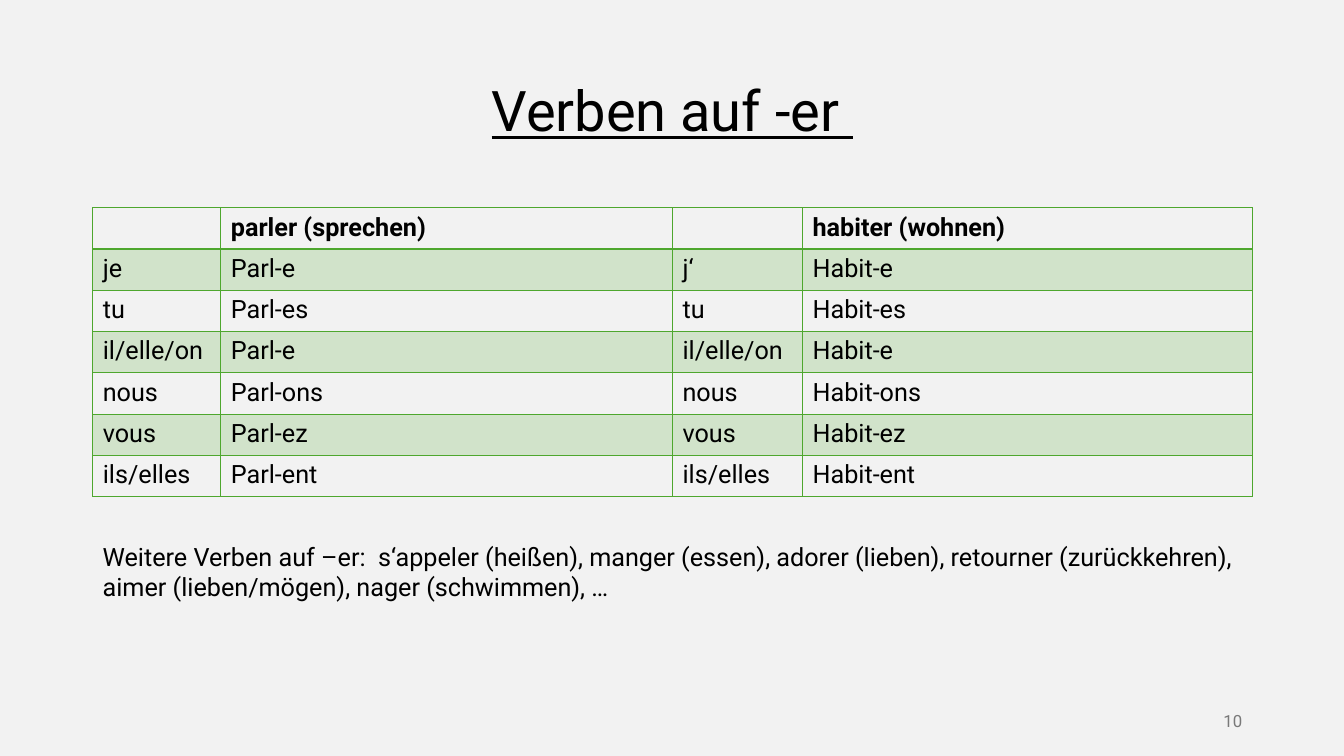
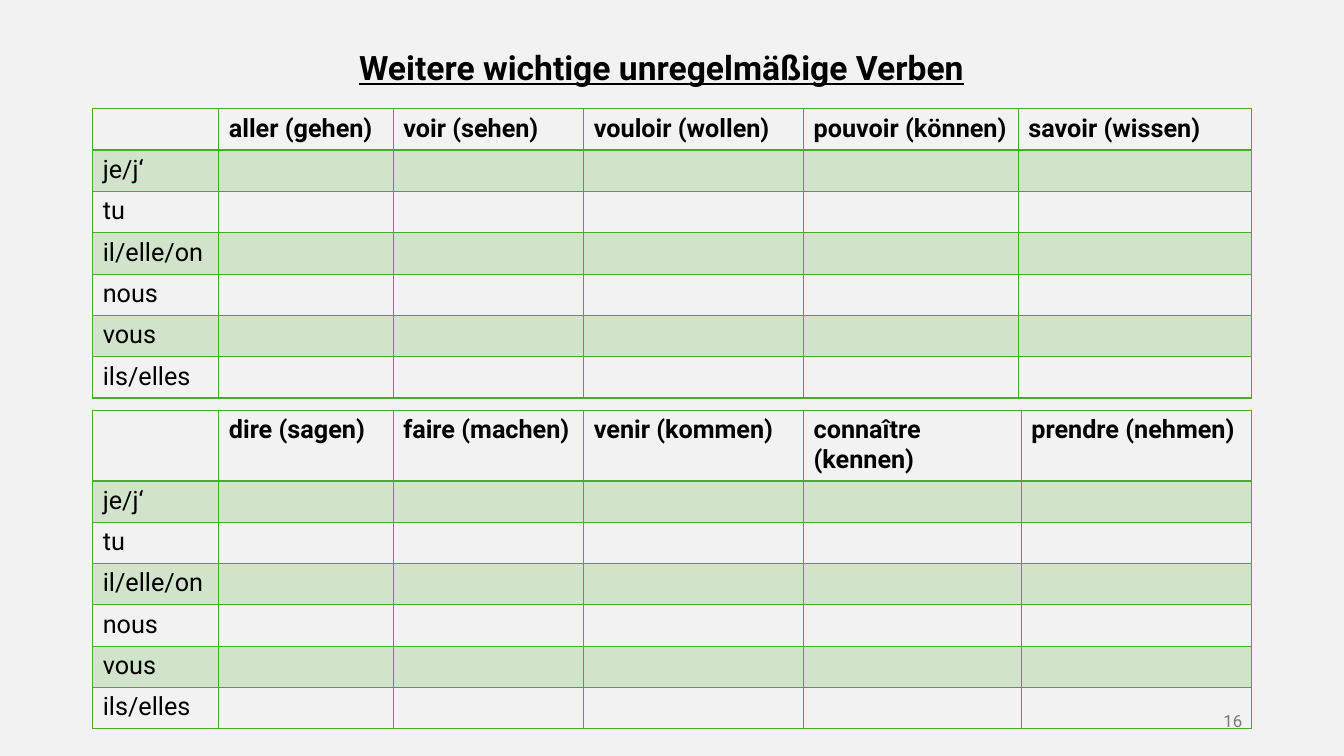
from lxml import etree
from pptx import Presentation
from pptx.dml.color import RGBColor
from pptx.enum import text
from pptx.oxml import ns
from pptx.util import Inches, Pt

BACKGROUND = RGBColor(0xF2, 0xF2, 0xF2)
BLACK = RGBColor(0, 0, 0)
GREY = RGBColor(0x79, 0x79, 0x79)
GREEN = RGBColor(0x4E, 0xA7, 0x2E)
BAND_OPACITY = 20
FONT = "Roboto"
LEFT, WIDTH, ROW_HEIGHT = 0.92, 11.5, 0.41
PRONOUNS = ["tu", "il/elle/on", "nous", "vous", "ils/elles"]
ENDINGS = ["e", "es", "e", "ons", "ez", "ent"]


def style_text(frame, size, color=BLACK, align=None, bold=False, underline=False):
    for paragraph in frame.paragraphs:
        paragraph.alignment = align
        for run in paragraph.runs:
            run.font.name = FONT
            run.font.size = Pt(size)
            run.font.color.rgb = color
            run.font.bold = bold
            run.font.underline = underline


def add_text(slide, box, wording, size, anchor=text.MSO_ANCHOR.TOP, **style):
    frame = slide.shapes.add_textbox(*map(Inches, box)).text_frame
    frame.word_wrap = True
    frame.vertical_anchor = anchor
    frame.text = wording
    style_text(frame, size, **style)
    return frame


def add_title(slide, box, wording, size, **style):
    return add_text(slide, box, wording, size, align=text.PP_ALIGN.CENTER,
                    underline=True, **style)


def add_page(deck, number):
    slide = deck.slides.add_slide(deck.slide_layouts[6])
    slide.background.fill.solid()
    slide.background.fill.fore_color.rgb = BACKGROUND
    add_text(slide, (9.42, 6.95, 3, 0.4), str(number), 12,
             anchor=text.MSO_ANCHOR.MIDDLE, color=GREY,
             align=text.PP_ALIGN.RIGHT)
    return slide


def set_borders(cell, top, bottom):
    widths = {"lnL": 1, "lnR": 1, "lnT": top, "lnB": bottom}
    properties = cell._tc.get_or_add_tcPr()
    for position, (side, width) in enumerate(widths.items()):
        line = etree.Element(ns.qn("a:" + side), w=str(Pt(width)))
        fill = etree.SubElement(line, ns.qn("a:solidFill"))
        etree.SubElement(fill, ns.qn("a:srgbClr"), val=str(GREEN))
        properties.insert(position, line)


def fill_band(cell):
    cell.fill.solid()
    cell.fill.fore_color.rgb = GREEN
    color = cell._tc.tcPr.find(".//" + ns.qn("a:solidFill") + "[last()]")
    etree.SubElement(color[0], ns.qn("a:alpha"), val=str(BAND_OPACITY * 1000))


def add_verb_table(slide, top, columns, rows, header_height=ROW_HEIGHT):
    heights = [header_height] + [ROW_HEIGHT] * (len(rows) - 1)
    box = (LEFT, top, WIDTH, sum(heights))
    table = slide.shapes.add_table(len(rows), len(columns),
                                   *map(Inches, box)).table
    table.first_row = table.horz_banding = False
    for column, width in zip(table.columns, columns):
        column.width = Inches(width)
    for row, height in zip(table.rows, heights):
        row.height = Inches(height)
    for r, row in enumerate(rows):
        for c, wording in enumerate(row):
            cell = table.cell(r, c)
            cell.text = wording
            style_text(cell.text_frame, 18, bold=r == 0)
            if r % 2:
                fill_band(cell)
            else:
                cell.fill.background()
            set_borders(cell, 2 if r == 1 else 1, 2 if r == 0 else 1)


def conjugate(subject, stem):
    return [(pronoun, f"{stem}-{ending}")
            for pronoun, ending in zip([subject] + PRONOUNS, ENDINGS)]


def empty_forms(verbs):
    return [[""] + verbs] + [[pronoun] + [""] * len(verbs)
                             for pronoun in ["je/j‘"] + PRONOUNS]


def build_regular_verbs(deck):
    slide = add_page(deck, 10)
    title = add_title(slide, (LEFT, 0.4, WIDTH, 1.45), "Verben auf -er ", 40,
                      anchor=text.MSO_ANCHOR.MIDDLE)
    title.paragraphs[0].line_spacing = 0.9
    rows = [("", "parler (sprechen)", "", "habiter (wohnen)")]
    rows += [parler + habiter for parler, habiter in
             zip(conjugate("je", "Parl"), conjugate("j‘", "Habit"))]
    add_verb_table(slide, 2.06, [1.27, 4.48, 1.29, 4.46], rows)
    add_text(slide, (LEFT, 5.32, WIDTH, 0.71),
             "Weitere Verben auf –er:  s‘appeler (heißen), manger (essen), "
             "adorer (lieben), retourner (zurückkehren),\n"
             "aimer (lieben/mögen), nager (schwimmen), …", 18)


def build_irregular_verbs(deck):
    slide = add_page(deck, 16)
    add_title(slide, (0.81, 0.42, WIDTH, 0.5),
              "Weitere wichtige unregelmäßige Verben", 24, bold=True)
    shared_columns = [1.25, 1.73, 1.89, 2.18]
    add_verb_table(slide, 1.08, shared_columns + [2.13, 2.31], empty_forms(
        ["aller (gehen)", "voir (sehen)", "vouloir (wollen)",
         "pouvoir (können)", "savoir (wissen)"]))
    add_verb_table(slide, 4.07, shared_columns + [2.16, 2.28], empty_forms(
        ["dire (sagen)", "faire (machen)", "venir (kommen)",
         "connaître (kennen)", "prendre (nehmen)"]), header_height=0.7)


def main():
    deck = Presentation()
    deck.slide_width = Inches(13.33)
    deck.slide_height = Inches(7.5)
    build_regular_verbs(deck)
    build_irregular_verbs(deck)
    deck.save("out.pptx")


if __name__ == "__main__":
    main()
